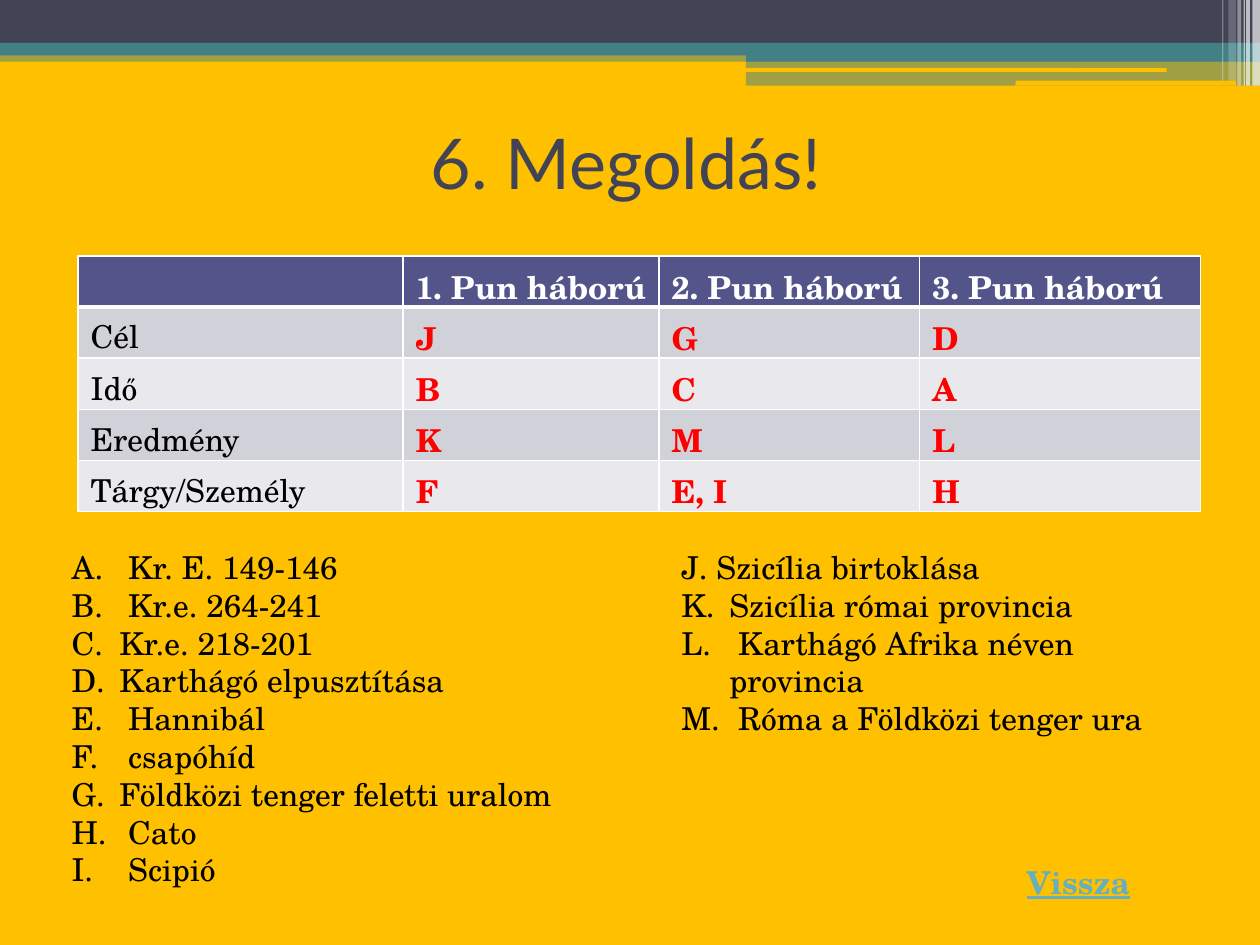
from dataclasses import dataclass

from lxml.etree import SubElement as Sub
from pptx import Presentation
from pptx.dml.color import RGBColor
from pptx.enum.shapes import MSO_SHAPE as Kind
from pptx.enum.text import MSO_ANCHOR as Anchor, MSO_AUTO_SIZE as Fit, PP_ALIGN as Align
from pptx.oxml.ns import qn
from pptx.util import Inches, Pt

WIDE, HIGH = Inches(10), Inches(7.5)
GOLD = RGBColor(0xFF, 0xC0, 0x00)
SLATE = RGBColor(0x42, 0x44, 0x56)
TEAL = RGBColor(0x43, 0x80, 0x86)
WHITE = RGBColor(0xFF, 0xFF, 0xFF)
BLACK = RGBColor(0x00, 0x00, 0x00)
RED = RGBColor(0xFF, 0x00, 0x00)
SKY = RGBColor(0x67, 0xAF, 0xBD)
VIOLET = RGBColor(0x53, 0x54, 0x8A)
BANDS = (RGBColor(0xE9, 0xE9, 0xED), RGBColor(0xD1, 0xD1, 0xDA))
SANS, SERIF = "Lato", "TeX Gyre Schola"


@dataclass
class Box:
    left: float
    top: float
    width: float
    height: float

    def place(self) -> tuple:
        return (across(self.left), down(self.top),
                across(self.width), down(self.height))


@dataclass
class Bar:
    box: Box
    color: RGBColor
    alpha: int = 100
    round: bool = False


@dataclass
class Style:
    color: RGBColor = BLACK
    size: int = 18
    face: str = SERIF
    bold: bool = False
    under: bool = False


def across(share: float) -> int:
    return round(WIDE * share / 100)


def down(share: float) -> int:
    return round(HIGH * share / 100)


def paint(font, style: Style) -> None:
    font.name, font.size = style.face, Pt(style.size)
    font.bold, font.underline = style.bold, style.under
    font.color.rgb = style.color


def draw_bar(slide, bar: Bar) -> None:
    kind = Kind.ROUNDED_RECTANGLE if bar.round else Kind.RECTANGLE
    shape = slide.shapes.add_shape(kind, *bar.box.place())
    shape.shadow.inherit = False
    shape.fill.solid()
    shape.fill.fore_color.rgb = bar.color
    shape.line.fill.background()
    if bar.alpha < 100:
        tint = shape.fill._xPr.find(".//" + qn("a:srgbClr"))
        Sub(tint, qn("a:alpha"), val=str(bar.alpha * 1000))


def add_text(slide, box: Box, text: str, style: Style, wrap: bool = True):
    frame = slide.shapes.add_textbox(*box.place()).text_frame
    frame.word_wrap = wrap
    frame.text = text
    for para in frame.paragraphs:
        for run in para.runs:
            paint(run.font, style)
    return frame


def number(para, start: int) -> None:
    props = para._p.get_or_add_pPr()
    props.set("marL", str(Inches(0.38)))
    props.set("indent", str(-Inches(0.38)))
    Sub(props, qn("a:buFont"), typeface="+mj-lt")
    Sub(props, qn("a:buAutoNum"), type="alphaUcPeriod", startAt=str(start))


def add_list(slide, box: Box, items: list, start: int, plain: int = 0) -> None:
    frame = add_text(slide, box, "\n".join(items), Style())
    frame.auto_size = Fit.SHAPE_TO_FIT_TEXT
    for para in frame.paragraphs[plain:]:
        number(para, start)


def outline(run, color: RGBColor, width: float) -> None:
    props = run.font._element
    line = Sub(props, qn("a:ln"), w=str(Pt(width)))
    fill = Sub(line, qn("a:solidFill"))
    Sub(fill, qn("a:srgbClr"), val=str(color))
    props.insert(0, line)


def edge(cell, row: int) -> None:
    props = cell._tc.get_or_add_tcPr()
    thick = {0: "lnB", 1: "lnT"}.get(row)
    for spot, side in enumerate(("lnL", "lnR", "lnT", "lnB")):
        width = Pt(3 if side == thick else 1)
        line = Sub(props, qn("a:" + side), w=str(width))
        fill = Sub(line, qn("a:solidFill"))
        Sub(fill, qn("a:srgbClr"), val=str(WHITE))
        props.insert(spot, line)


def add_grid(slide, box: Box, widths: list, rows: list) -> None:
    table = slide.shapes.add_table(len(rows), len(widths), *box.place()).table
    for col, width in zip(table.columns, widths):
        col.width = across(width)
    for r, row in enumerate(rows):
        for c, text in enumerate(row):
            cell = table.cell(r, c)
            cell.text = text
            color = WHITE if r == 0 else RED if c else BLACK
            style = Style(color, bold=r == 0 or c > 0)
            paint(cell.text_frame.paragraphs[0].font, style)
            for run in cell.text_frame.paragraphs[0].runs:
                paint(run.font, style)
            cell.fill.solid()
            cell.fill.fore_color.rgb = BANDS[r % 2] if r else VIOLET
            edge(cell, r)


BARS = [
    Bar(Box(0, 5.33, 100, 1.2), TEAL, 50),
    Bar(Box(0, 0, 100, 4.53), SLATE),
    Bar(Box(0, 4.53, 100, 1.33), TEAL),
    Bar(Box(59.2, 5.2, 40.8, 1.33), TEAL),
    Bar(Box(59.2, 6.4, 40.8, 2.67), TEAL, 50),
    Bar(Box(59.1, 7.2, 33.5, 0.4), GOLD, round=True),
    Bar(Box(80.6, 8.53, 17.5, 0.53), GOLD, round=True),
]
STRIPES = [
    (99.4, 0.6, 9.07, 65), (98.9, 0.3, 9.07, 65), (98.7, 0.1, 9.07, 60),
    (98.2, 0.3, 9.07, 40), (97.5, 0.6, 8.53, 20), (97, 0.1, 8.53, 30),
]
ROWS = [
    ["", "1. Pun háború", "2. Pun háború", "3. Pun háború"],
    ["Cél", "J", "G", "D"],
    ["Idő", "B", "C", "A"],
    ["Eredmény", "K", "M", "L"],
    ["Tárgy/Személy", "F", "E, I", "H"],
]
FIRST = [
    " Kr. E. 149-146", " Kr.e. 264-241", "Kr.e. 218-201",
    "Karthágó elpusztítása", " Hannibál", " csapóhíd",
    "Földközi tenger feletti uralom", " Cato", " Scipió",
]
SECOND = [
    "J. Szicília birtoklása", "Szicília római provincia",
    " Karthágó Afrika néven provincia", " Róma a Földközi tenger ura",
]


def main() -> None:
    deck = Presentation()
    deck.slide_width, deck.slide_height = WIDE, HIGH
    slide = deck.slides.add_slide(deck.slide_layouts[6])
    slide.background.fill.solid()
    slide.background.fill.fore_color.rgb = GOLD
    for bar in BARS:
        draw_bar(slide, bar)
    for left, width, height, alpha in STRIPES:
        draw_bar(slide, Bar(Box(left, 0, width, height), WHITE, alpha))

    title = add_text(slide, Box(4.7, 9.33, 90, 15.6), "6. Megoldás!",
                     Style(SLATE, 40, SANS))
    title.vertical_anchor = Anchor.MIDDLE
    title.paragraphs[0].alignment = Align.CENTER

    back = add_text(slide, Box(80.5, 90.67, 10.3, 5.33), "Vissza",
                    Style(SKY, bold=True, under=True), wrap=False)
    outline(back.paragraphs[0].runs[0], WHITE, 1.4)

    add_grid(slide, Box(6.2, 27.07, 89.1, 27.07), [25.8, 20.3, 20.7, 22.3], ROWS)
    add_list(slide, Box(4.7, 57.33, 43, 37.73), FIRST, 1)
    add_list(slide, Box(53.1, 57.33, 42.2, 21.6), SECOND, 11, plain=1)
    deck.save("out.pptx")


if __name__ == "__main__":
    main()
